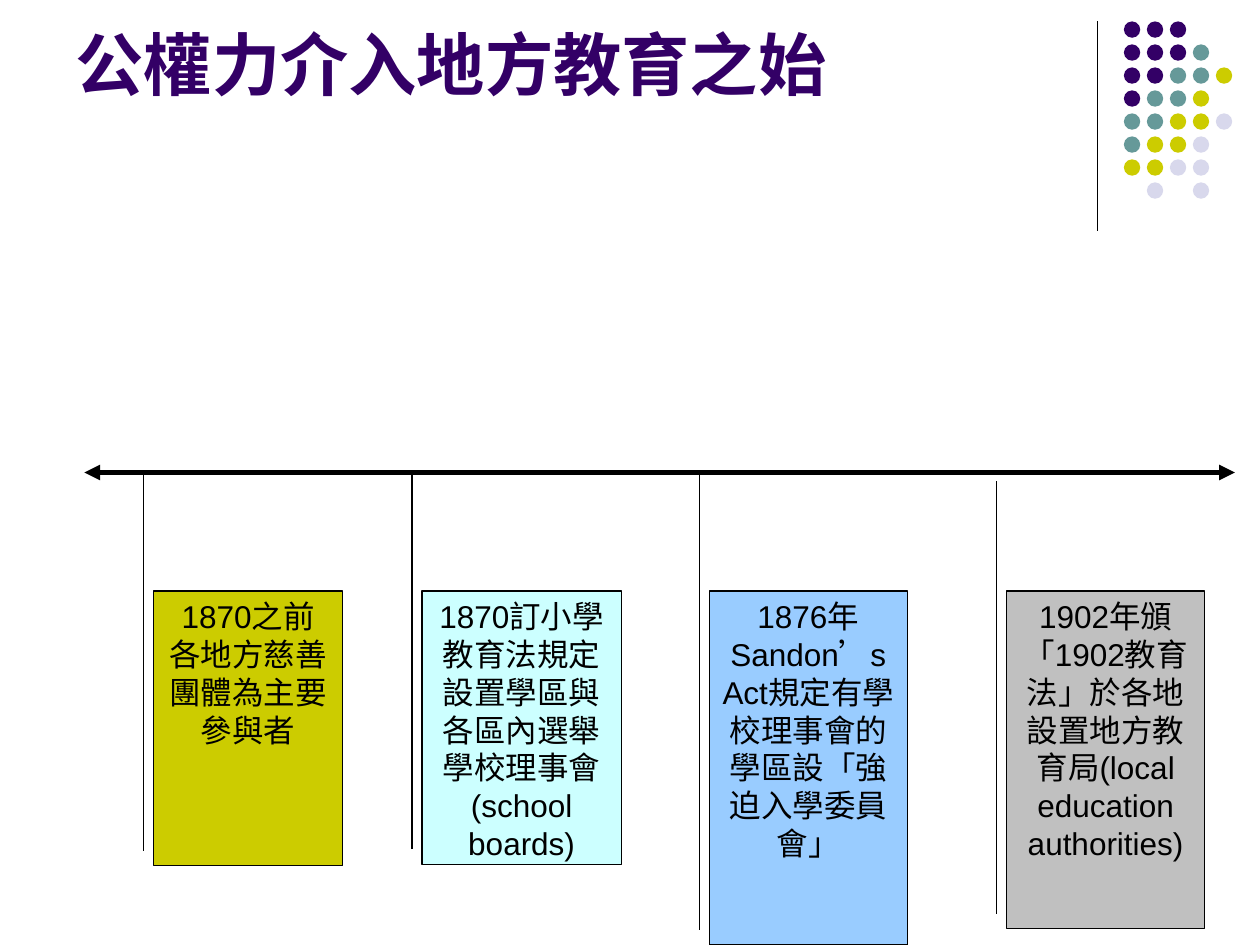
from dataclasses import dataclass

from lxml.etree import SubElement
from pptx import Presentation
from pptx.dml.color import RGBColor
from pptx.enum.shapes import MSO_CONNECTOR, MSO_SHAPE
from pptx.enum.text import MSO_ANCHOR, PP_ALIGN
from pptx.oxml.ns import qn
from pptx.util import Inches, Pt


@dataclass(frozen=True)
class Theme:
    """Colours, font and sizes of the slide."""
    purple: str = "330066"
    teal: str = "669999"
    olive: str = "CCCC00"
    lavender: str = "D8D8EC"
    cyan: str = "CCFFFF"
    sky: str = "99CCFF"
    grey: str = "C0C0C0"
    ink: str = "000000"
    font: str = "Arial"
    title_size: int = 39
    body_size: int = 18
    thin: float = 0.75
    thick: float = 3


THEME = Theme()

DOT_ROWS = ("PPP", "PPPT", "PPTTO", "PTTO", "TTOOL", "TOOL", "OOLL", " L L")
DOT_COLOURS = {"P": THEME.purple, "T": THEME.teal, "O": THEME.olive, "L": THEME.lavender}

AXIS_TOP = 3.75
EVENTS = (
    ((1.22, 4.69, 1.5, 2.18), AXIS_TOP, THEME.olive,
     ("1870之前", "各地方慈善團體為主要參與者")),
    ((3.35, 4.69, 1.58, 2.17), AXIS_TOP, THEME.cyan,
     ("1870訂小學教育法規定設置學區與各區內選舉學校理事會", "(school boards)")),
    ((5.63, 4.69, 1.57, 2.81), AXIS_TOP, THEME.sky,
     ("1876年 Sandon’s Act規定有學校理事會的學區設「強迫入學委員會」",)),
    ((7.99, 4.69, 1.57, 2.68), 3.82, THEME.grey,
     ("1902年頒「1902教育法」於各地設置地方教育局(local education authorities)",)),
)


def style_paragraph(paragraph, size, colour, bold, align):
    """Set the font and alignment of one paragraph."""
    paragraph.alignment = align
    paragraph.font.name = THEME.font
    paragraph.font.size = Pt(size)
    paragraph.font.bold = bold
    paragraph.font.color.rgb = RGBColor.from_string(colour)


def add_filled(slide, preset, box, colour):
    """Add a preset shape with a plain fill and no shadow."""
    shape = slide.shapes.add_shape(preset, *map(Inches, box))
    shape.shadow.inherit = False
    shape.fill.solid()
    shape.fill.fore_color.rgb = RGBColor.from_string(colour)
    return shape


def add_rule(slide, start, end, width):
    """Add a straight black line without a shadow."""
    rule = slide.shapes.add_connector(
        MSO_CONNECTOR.STRAIGHT, *map(Inches, (*start, *end)))
    rule.line.width = Pt(width)
    rule.line.color.rgb = RGBColor.from_string(THEME.ink)
    SubElement(rule.element.spPr, qn("a:effectLst"))
    return rule


def place_title(slide, box, text):
    """Move, fill and format the title placeholder."""
    title = slide.shapes.title
    title.left, title.top, title.width, title.height = map(Inches, box)
    title.text_frame.text = text
    title.text_frame.word_wrap = True
    title.text_frame.vertical_anchor = MSO_ANCHOR.TOP
    style_paragraph(title.text_frame.paragraphs[0], THEME.title_size,
                    THEME.purple, True, PP_ALIGN.LEFT)


def draw_dot_ornament(slide, box):
    """Draw the vertical rule and the grid of coloured dots."""
    left, top, width, height = box
    add_rule(slide, (left, top), (left, top + height), THEME.thin)
    diameter, indent = 0.13, 0.21
    step = (width - indent - diameter) / 4
    for row, letters in enumerate(DOT_ROWS):
        for column, letter in enumerate(letters):
            if letter in DOT_COLOURS:
                dot_box = (left + indent + column * step, top + row * step,
                           diameter, diameter)
                dot = add_filled(slide, MSO_SHAPE.OVAL, dot_box, DOT_COLOURS[letter])
                dot.line.fill.background()


def draw_axis(slide, left, right, top):
    """Draw the time axis with an arrowhead at each end."""
    axis = add_rule(slide, (left, top), (right, top), THEME.thick)
    for end in ("a:headEnd", "a:tailEnd"):
        SubElement(axis.line._get_or_add_ln(), qn(end), type="triangle")


def draw_event(slide, box, pointer_top, colour, lines):
    """Draw one event callout with its pointer beside the box."""
    top, width, height = box[1:]
    pointer_x = -0.08 / width
    callout = add_filled(slide, MSO_SHAPE.LINE_CALLOUT_1, box, colour)
    pointer = (1 - 0.12 / height, pointer_x, (pointer_top - top) / height, pointer_x)
    for index, value in enumerate(pointer):
        callout.adjustments[index] = value
    callout.line.width = Pt(THEME.thin)
    callout.line.color.rgb = RGBColor.from_string(THEME.ink)
    frame = callout.text_frame
    frame.word_wrap = True
    frame.vertical_anchor = MSO_ANCHOR.TOP
    frame.text = "\n".join(lines)
    for paragraph in frame.paragraphs:
        style_paragraph(paragraph, THEME.body_size, THEME.ink, False, PP_ALIGN.CENTER)


def main():
    """Build the slide and save it."""
    deck = Presentation()
    deck.slide_width, deck.slide_height = Inches(10), Inches(7.5)
    slide = deck.slides.add_slide(deck.slide_layouts[5])
    draw_dot_ornament(slide, (8.71, 0.17, 1.07, 1.66))
    place_title(slide, (0.5, 0.13, 8.25, 1.42), "公權力介入地方教育之始")
    draw_axis(slide, 0.67, 9.8, AXIS_TOP)
    for event in EVENTS:
        draw_event(slide, *event)
    deck.save("out.pptx")


if __name__ == "__main__":
    main()
